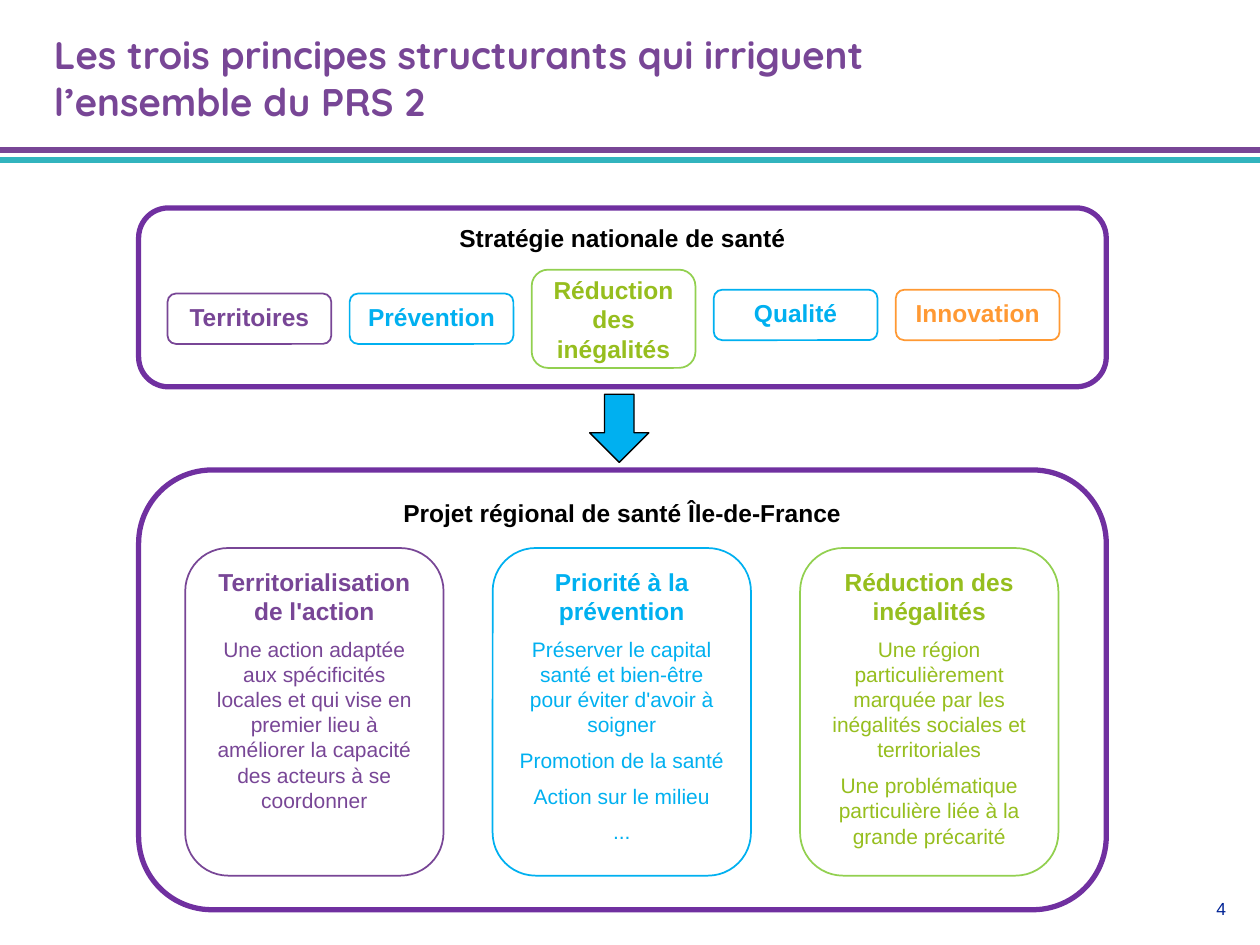
from lxml.etree import SubElement
from pptx import Presentation
from pptx.dml.color import RGBColor
from pptx.enum.shapes import MSO_CONNECTOR as Connector, MSO_SHAPE as Shape
from pptx.enum.text import MSO_ANCHOR as Anchor, PP_ALIGN as Align
from pptx.oxml.ns import qn
from pptx.util import Inches, Pt

PURPLE = RGBColor(0x78, 0x46, 0x96)
VIOLET = RGBColor(0x70, 0x30, 0xA0)
TEAL = RGBColor(0x32, 0xB4, 0xBE)
BLUE = RGBColor(0x00, 0xB0, 0xF0)
GREEN = RGBColor(0x92, 0xD0, 0x50)
OLIVE = RGBColor(0x96, 0xBE, 0x1E)
ORANGE = RGBColor(0xFF, 0x99, 0x33)
NAVY = RGBColor(0x00, 0x23, 0x95)
BLACK = RGBColor(0, 0, 0)

deck = Presentation()
deck.slide_width, deck.slide_height = Inches(10), Inches(7.5)
COLUMN = deck.slide_width / 100
ROW = deck.slide_height / 75
slide = deck.slides.add_slide(deck.slide_layouts[6])


def grid(left, top, width, height):
    return [round(n * unit) for n, unit in zip((left, top, width, height), (COLUMN, ROW) * 2)]


def write(frame, text, size=14, color=BLACK, bold=True, align=Align.CENTER,
          font="Arial", anchor=Anchor.TOP, before=0):
    frame.word_wrap = True
    frame.vertical_anchor = anchor
    para = frame.paragraphs[0] if not frame.text else frame.add_paragraph()
    para.alignment = align
    para.space_before = Pt(before)
    span = para.add_run()
    span.text = text
    span.font.name, span.font.size, span.font.bold = font, Pt(size), bold
    span.font.color.rgb = color


number = slide.shapes.add_textbox(*grid(93.3, 70.8, 5, 5))
write(number.text_frame, "4", size=10, color=NAVY, bold=False, align=Align.RIGHT)

for row, color in [(11.9, PURPLE), (12.7, TEAL)]:
    rule = slide.shapes.add_connector(Connector.STRAIGHT, *grid(0, row, 100, row))
    rule.line.color.rgb, rule.line.width = color, Pt(3)
    SubElement(rule._element.spPr, qn("a:effectLst"))

title = slide.shapes.add_textbox(*grid(3.3, 2.4, 82.1, 7.5))
title.text_frame.margin_right = round(3 * COLUMN)
write(title.text_frame, "Les trois principes structurants qui irriguent l’ensemble du PRS 2",
      size=22, color=PURPLE, align=Align.LEFT, font="Quicksand", anchor=Anchor.MIDDLE)

frames = [
    ("Stratégie nationale de santé", 16.5, 14.2),
    ("Projet régional de santé Île-de-France", 37.3, 34.9),
]
axes = [
    ("Territoires", 23.3, 4, PURPLE, PURPLE),
    ("Prévention", 23.3, 4, BLUE, BLUE),
    ("Réduction des inégalités", 21.4, 7.8, GREEN, OLIVE),
    ("Qualité", 23, 4, BLUE, BLUE),
    ("Innovation", 23, 4, ORANGE, ORANGE),
]
principles = [
    ("Territorialisation de l'action", PURPLE, PURPLE,
     ["Une action adaptée aux spécificités locales et qui vise en premier lieu "
      "à améliorer la capacité des acteurs à se coordonner"]),
    ("Priorité à la prévention", BLUE, BLUE,
     ["Préserver le capital santé et bien-être pour éviter d'avoir à soigner",
      "Promotion de la santé", "Action sur le milieu", "..."]),
    ("Réduction des inégalités", GREEN, OLIVE,
     ["Une région particulièrement marquée par les inégalités sociales et territoriales",
      "Une problématique particulière liée à la grande précarité"]),
]

boxes = [(grid(11, top, 76.8, height), VIOLET, 3, BLACK, heading, [])
         for heading, top, height in frames]
boxes += [(grid(13.3 + 14.45 * i, top, 13, height), edge, 1, color, heading, [])
          for i, (heading, top, height, edge, color) in enumerate(axes)]
boxes += [(grid(14.7 + 24.4 * i, 43.5, 20.5, 26), edge, 1, color, heading, details)
          for i, (heading, edge, color, details) in enumerate(principles)]

for place, edge, weight, color, heading, details in boxes:
    box = slide.shapes.add_shape(Shape.FLOWCHART_ALTERNATE_PROCESS, *place)
    box.shadow.inherit = False
    box.fill.background()
    box.line.color.rgb, box.line.width = edge, Pt(weight)
    centred = heading == "Réduction des inégalités" and not details
    write(box.text_frame, heading, color=color, anchor=Anchor.MIDDLE if centred else Anchor.TOP)
    for detail in details:
        write(box.text_frame, detail, size=12, color=color, bold=False, before=6)

arrow = slide.shapes.add_shape(Shape.DOWN_ARROW, *grid(46.8, 31.3, 4.7, 5.4))
arrow.shadow.inherit = False
arrow.fill.solid()
arrow.fill.fore_color.rgb = BLUE
arrow.line.color.rgb, arrow.line.width = BLACK, Pt(0.75)

deck.save("out.pptx")
